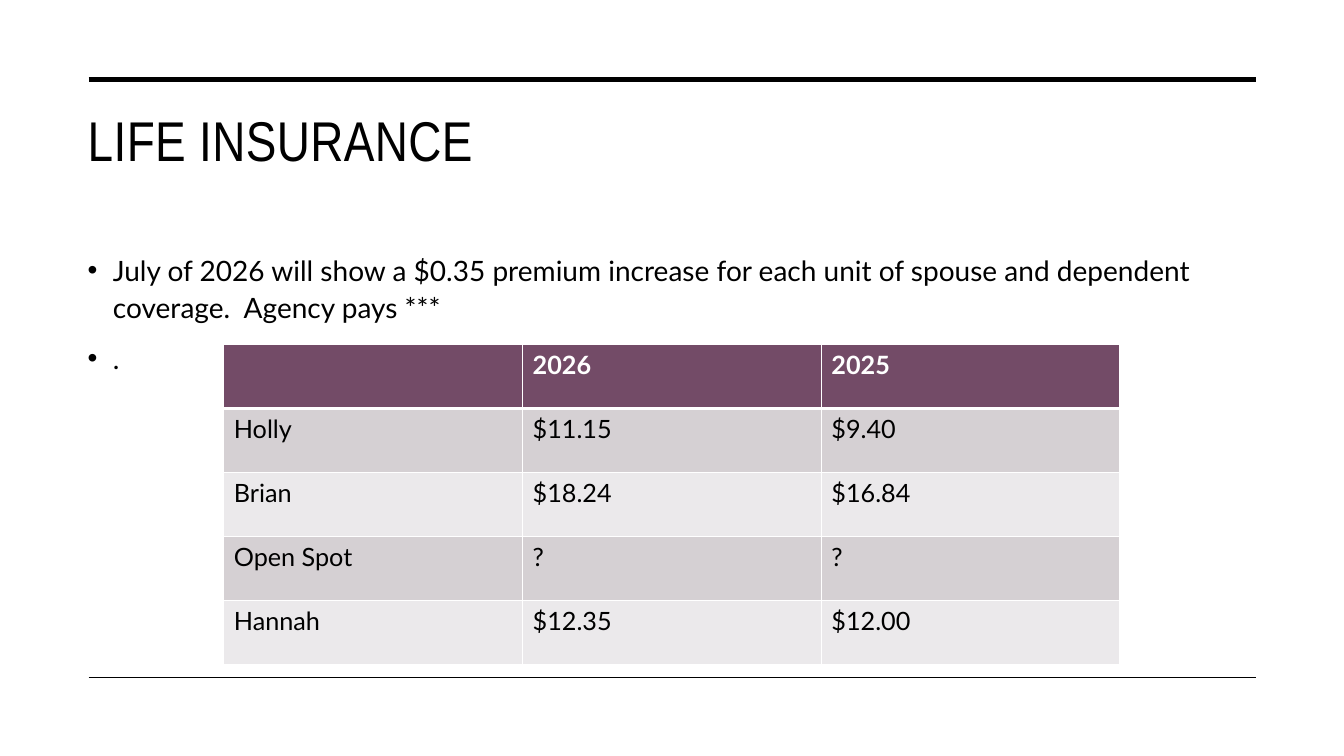
from lxml import etree
from pptx import Presentation
from pptx.dml.color import RGBColor
from pptx.enum import shapes, text
from pptx.oxml import ns
from pptx.util import Inches, Pt

# Content
TITLE = "LIFE INSURANCE"
BULLETS = [
    "July of 2026 will show a $0.35 premium increase for each unit of spouse "
    "and dependent coverage.  Agency pays ***",
    ".",
]
PREMIUMS = [
    ("", "2026", "2025"),
    ("Holly", "$11.15", "$9.40"),
    ("Brian", "$18.24", "$16.84"),
    ("Open Spot", "?", "?"),
    ("Hannah", "$12.35", "$12.00"),
]
BLACK, WHITE = "000000", "FFFFFF"
HEADER, BANDS = "734B67", ("D5D0D3", "EBE9EB")
RULES = [(0.79, 3.5), (6.72, 1)]  # height on the slide, line width
LEFT, WIDTH = 0.77, 11.69


def color(value):
    return RGBColor.from_string(value)


def set_font(paragraph, name, size, value, bold=False):
    font = paragraph.font
    font.name, font.size, font.bold = name, Pt(size), bold
    font.color.rgb = color(value)


def place(placeholder, top, height):
    placeholder.left, placeholder.top = Inches(LEFT), Inches(top)
    placeholder.width, placeholder.height = Inches(WIDTH), Inches(height)
    frame = placeholder.text_frame
    frame.word_wrap = True
    frame.auto_size = text.MSO_AUTO_SIZE.NONE
    frame.vertical_anchor = text.MSO_ANCHOR.TOP
    return frame


def add_border(cell, side, width):
    line = etree.SubElement(cell._tc.get_or_add_tcPr(), ns.qn(f"a:ln{side}"), w=str(Pt(width)))
    fill = etree.SubElement(line, ns.qn("a:solidFill"))
    etree.SubElement(fill, ns.qn("a:srgbClr"), val=WHITE)


prs = Presentation()
prs.slide_width, prs.slide_height = Inches(13.33), Inches(7.5)
slide = prs.slides.add_slide(prs.slide_layouts[1])

# Rules above and below the content
for y, width in RULES:
    rule = slide.shapes.add_connector(
        shapes.MSO_CONNECTOR.STRAIGHT, Inches(0.88), Inches(y), Inches(12.46), Inches(y))
    rule.line.color.rgb = color(BLACK)
    rule.line.width = Pt(width)
    etree.SubElement(rule._element.spPr, ns.qn("a:effectLst"))

# Title
heading = place(slide.shapes.title, 1, 1.43).paragraphs[0]
heading.text = TITLE
heading.alignment = text.PP_ALIGN.LEFT
set_font(heading, "Arial Narrow", 40, BLACK)
heading.font._element.set("spc", "30")

# Bullets
body = place(slide.placeholders[1], 2.43, 4.09)
for i, wording in enumerate(BULLETS):
    bullet = body.add_paragraph() if i else body.paragraphs[0]
    bullet.text = wording
    bullet.line_spacing = 1.1
    bullet.space_before = Pt(10 if i else 0)
    props = bullet._p.get_or_add_pPr()
    props.set("marL", str(Inches(0.25)))
    props.set("indent", str(-Inches(0.25)))
    etree.SubElement(props, ns.qn("a:buChar"), char="•")
    set_font(bullet, "Lato", 20, BLACK)

# Premium table
premiums = slide.shapes.add_table(
    len(PREMIUMS), len(PREMIUMS[0]),
    Inches(2.22), Inches(3.42), Inches(8.89), Inches(3.17)).table
for r, row in enumerate(PREMIUMS):
    for c, value in enumerate(row):
        cell = premiums.cell(r, c)
        cell.text = value
        set_font(cell.text_frame.paragraphs[0], "Lato", 18,
                 BLACK if r else WHITE, bold=r == 0)
        for side in "LRTB":
            under_header = (r, side) in ((0, "B"), (1, "T"))
            add_border(cell, side, 3 if under_header else 1)
        cell.fill.solid()
        cell.fill.fore_color.rgb = color(BANDS[(r - 1) % 2] if r else HEADER)

prs.save("out.pptx")
